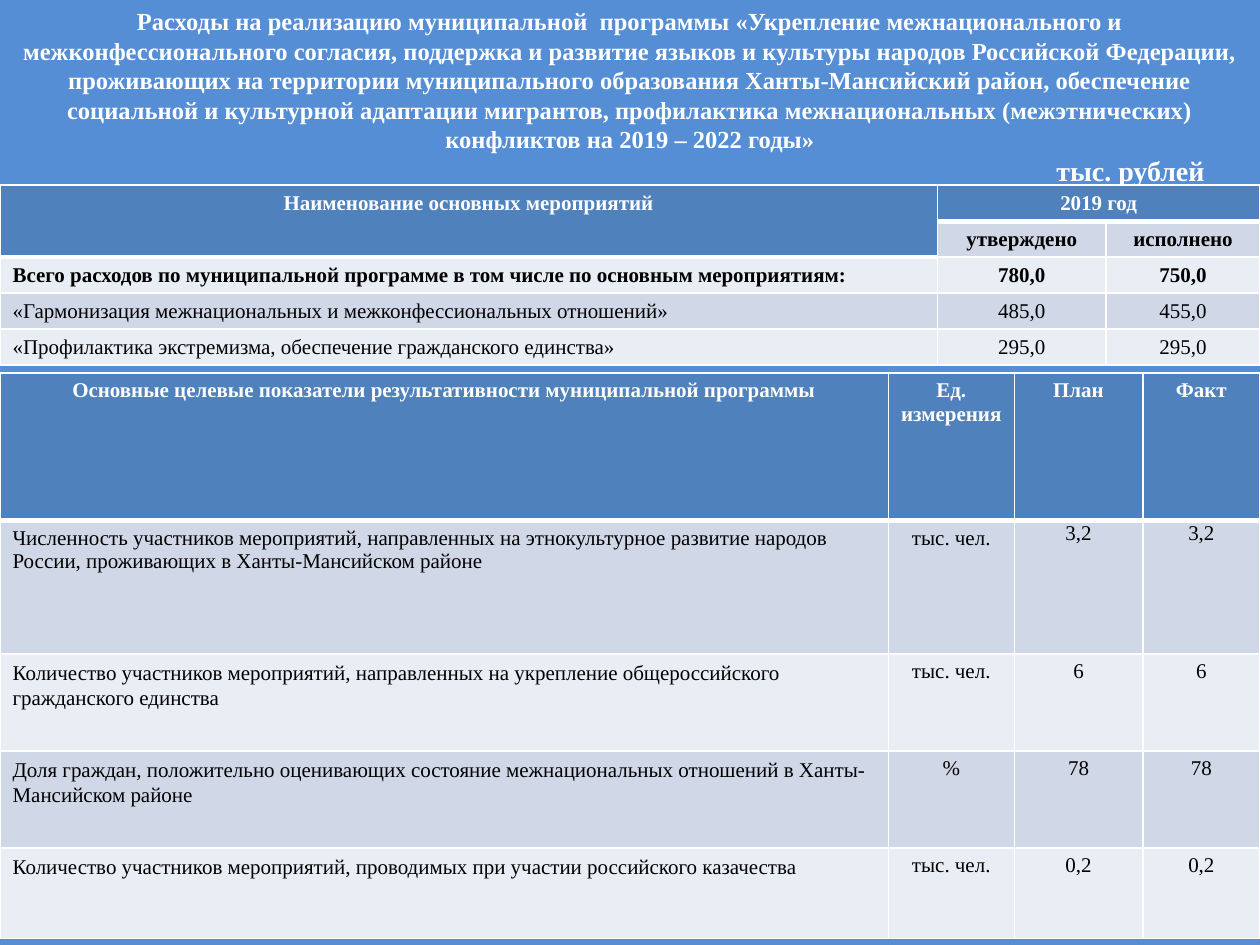
from lxml.etree import SubElement
from pptx import Presentation
from pptx.dml.color import RGBColor
from pptx.enum.text import MSO_ANCHOR, PP_ALIGN
from pptx.oxml.ns import qn
from pptx.util import Inches, Pt

FONT = "Times New Roman"
WHITE = RGBColor(0xFF, 0xFF, 0xFF)
BLACK = RGBColor(0, 0, 0)
BACKGROUND = RGBColor(0x55, 0x8E, 0xD5)
HEADER = RGBColor(0x4F, 0x81, 0xBD)
BANDS = (RGBColor(0xD0, 0xD8, 0xE8), RGBColor(0xE9, 0xED, 0xF4))
BORDERS = (("a:lnL", 1), ("a:lnR", 1), ("a:lnT", 1), ("a:lnB", 3))

TITLE = (
    "Расходы на реализацию муниципальной  программы «Укрепление межнационального и "
    "межконфессионального согласия, поддержка и развитие языков и культуры народов "
    "Российской Федерации, проживающих на территории муниципального образования "
    "Ханты-Мансийский район, обеспечение социальной и культурной адаптации мигрантов, "
    "профилактика межнациональных (межэтнических) конфликтов на 2019 – 2022 годы»"
)
UNITS = "тыс. рублей"

EXPENSES = [
    ("Наименование основных мероприятий", "2019 год", ""),
    ("", "утверждено", "исполнено"),
    ("Всего расходов по муниципальной программе в том числе по основным мероприятиям:",
     "780,0", "750,0"),
    ("«Гармонизация межнациональных и межконфессиональных отношений»", "485,0", "455,0"),
    ("«Профилактика экстремизма, обеспечение гражданского единства»", "295,0", "295,0"),
]
INDICATORS = [
    ("Основные целевые показатели результативности муниципальной программы",
     "Ед. измерения", "План", "Факт"),
    ("Численность участников мероприятий, направленных на этнокультурное развитие "
     "народов России, проживающих в Ханты-Мансийском районе", "тыс. чел.", "3,2", "3,2"),
    ("Количество участников мероприятий, направленных на укрепление общероссийского "
     "гражданского единства", "тыс. чел.", "6", "6"),
    ("Доля граждан, положительно оценивающих состояние межнациональных отношений в "
     "Ханты-Мансийском районе", "%", "78", "78"),
    ("Количество участников мероприятий, проводимых при участии российского казачества",
     "тыс. чел.", "0,2", "0,2"),
]


def add_text(paragraph, text, size, color, bold, align):
    paragraph.alignment = align
    run = paragraph.add_run()
    run.text = text
    run.font.name = FONT
    run.font.size = Pt(size)
    run.font.bold = bold
    run.font.color.rgb = color


def add_borders(cell):
    properties = cell._tc.get_or_add_tcPr()
    for tag, width in BORDERS:
        line = SubElement(properties, qn(tag), w=str(Pt(width)))
        fill = SubElement(line, qn("a:solidFill"))
        SubElement(fill, qn("a:srgbClr"), val=str(WHITE))


def add_table(slide, rows, top, widths, heights, bold_rows):
    frame = slide.shapes.add_table(len(rows), len(widths), 0, Inches(top),
                                   Inches(sum(widths)), Inches(sum(heights)))
    table = frame.table
    for column, width in zip(table.columns, widths):
        column.width = Inches(width)
    for row, height in zip(table.rows, heights):
        row.height = Inches(height)
    for i, values in enumerate(rows):
        for j, value in enumerate(values):
            cell = table.cell(i, j)
            if i == 0:
                add_borders(cell)
            cell.fill.solid()
            cell.fill.fore_color.rgb = BANDS[(i - 1) % 2] if i else HEADER
            if value:
                centred = i == 0 or j > 0
                add_text(cell.text_frame.paragraphs[0], value, 12, BLACK if i else WHITE,
                         i < bold_rows, PP_ALIGN.CENTER if centred else PP_ALIGN.LEFT)
    return table


presentation = Presentation()
presentation.slide_width = Inches(10)
presentation.slide_height = Inches(7.5)
slide = presentation.slides.add_slide(presentation.slide_layouts[5])
slide.background.fill.solid()
slide.background.fill.fore_color.rgb = BACKGROUND

title = slide.shapes.title
title.left, title.top, title.width, title.height = 0, 0, Inches(10), Inches(1.47)
title_frame = title.text_frame
title_frame.word_wrap = True
title_frame.vertical_anchor = MSO_ANCHOR.TOP
title_frame.margin_top = Inches(0.05)
title_frame.margin_bottom = 0
heading = title_frame.paragraphs[0]
add_text(heading, TITLE, 14, WHITE, True, PP_ALIGN.CENTER)
units = title_frame.add_paragraph()
units.space_before = Pt(0)
add_text(units, UNITS, 16, WHITE, True, PP_ALIGN.RIGHT)
units._p.get_or_add_pPr().set("marR", str(Inches(0.34)))

expenses = add_table(slide, EXPENSES, 1.47, (7.44, 1.34, 1.22), (0.28,) * 5, 3)
expenses.cell(0, 0).merge(expenses.cell(1, 0))
expenses.cell(0, 1).merge(expenses.cell(0, 2))

indicators = add_table(slide, INDICATORS, 2.96, (7.05, 1, 1.02, 0.93),
                       (1.17, 1.06, 0.77, 0.77, 0.72), 1)
for row in range(2, 5):
    indicators.cell(row, 0).text_frame.paragraphs[0].line_spacing = 1.07
for column in (2, 3):
    cell = indicators.cell(1, column)
    cell.margin_left = cell.margin_right = cell.margin_top = cell.margin_bottom = 0
    cell.text_frame.paragraphs[0].line_spacing = 1.06

presentation.save("out.pptx")
